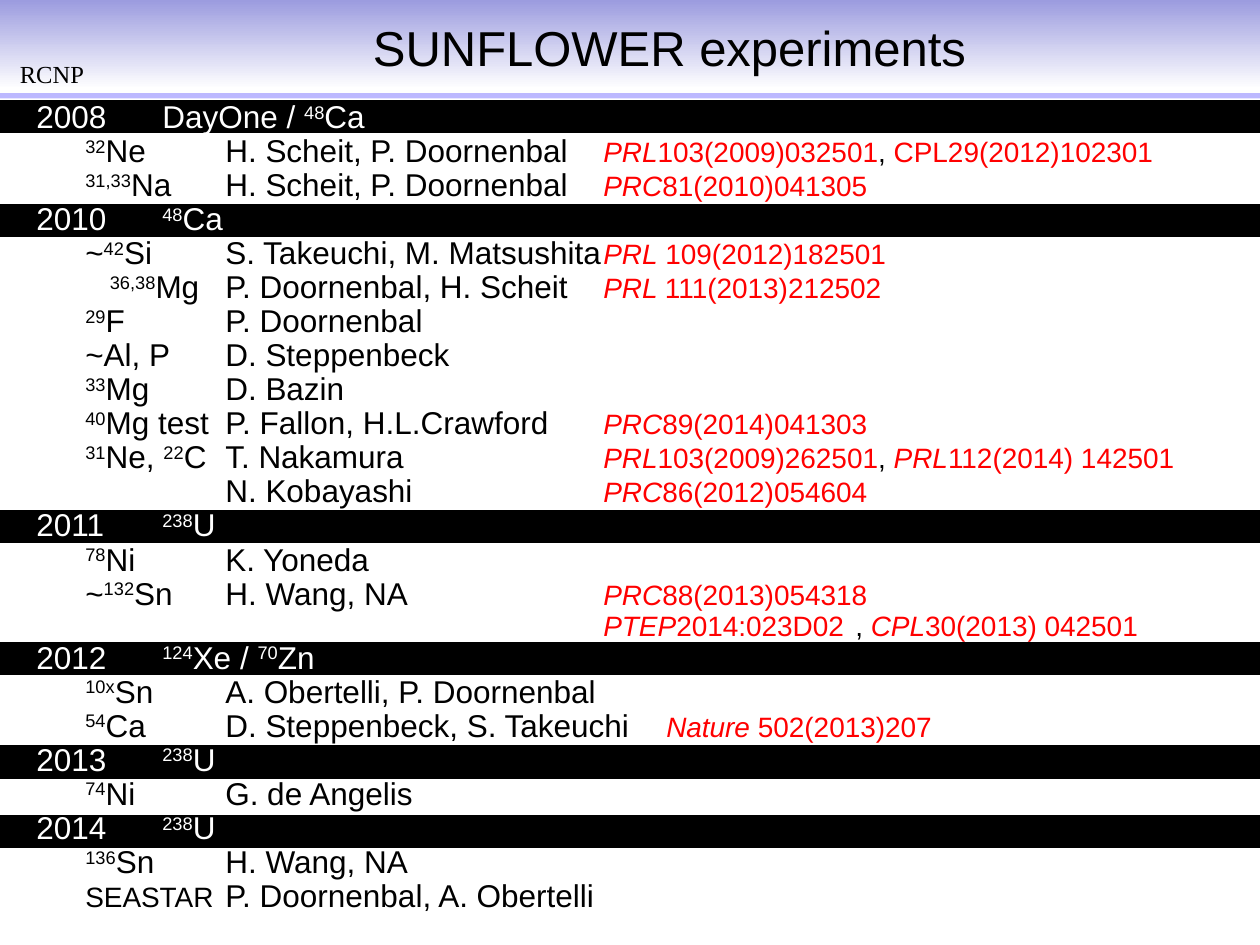
"""Build the SUNFLOWER experiments slide: beam times, spokespersons and papers by year."""
from pptx import Presentation
from pptx.dml.color import RGBColor
from pptx.enum import shapes, text
from pptx.oxml.ns import qn
from pptx.util import Pt
from lxml import etree

HUES = {"black": "000000", "white": "FFFFFF", "red": "FF0000",
        "line": "BCB8FF", "top": "9C9CDF"}
TABS = [28, 108, 324, 360, 468]

YEARS = [
    ("2008", "DayOne / ^48^Ca", 58.3, [
        ("^32^Ne", "H. Scheit, P. Doornenbal",
         [("PRL", "103(2009)032501"), ("", "CPL29(2012)102301")]),
        ("^31,33^Na", "H. Scheit, P. Doornenbal", [("PRC", "81(2010)041305")]),
    ]),
    ("2010", "^48^Ca", 117.5, [
        ("~^42^Si", "S. Takeuchi, M. Matsushita", [("PRL", " 109(2012)182501")]),
        ("^36,38^Mg", "P. Doornenbal, H. Scheit", [("PRL ", "111(2013)212502")]),
        ("^29^F", "P. Doornenbal", []),
        ("~Al, P", "D. Steppenbeck", []),
        ("^33^Mg", "D. Bazin", []),
        ("^40^Mg test", "P. Fallon, H.L.Crawford", [("PRC", "89(2014)041303")]),
        ("^31^Ne, ^22^C", "T. Nakamura",
         [("PRL", "103(2009)262501"), ("PRL", "112(2014) 142501")]),
        ("", "N. Kobayashi", [("PRC", "86(2012)054604")]),
    ]),
    ("2011", "^238^U", 292.4, [
        ("^78^Ni", "K. Yoneda", []),
        ("~^132^Sn", "H. Wang, NA", [("PRC", "88(2013)054318")]),
        ("", "", [("PTEP", "2014:023D02\t"), ("CPL", "30(2013) 042501")]),
    ]),
    ("2012", "^124^Xe / ^70^Zn", 368, [
        ("^10x^Sn", "A. Obertelli, P. Doornenbal", []),
        ("^54^Ca", "D. Steppenbeck, S. Takeuchi", [("Nature ", "502(2013)207")]),
    ]),
    ("2013", "^238^U", 427, [("^74^Ni", "G. de Angelis", [])]),
    ("2014", "^238^U", 466.5, [
        ("^136^Sn", "H. Wang, NA", []),
        ("SEASTAR", "P. Doornenbal, A. Obertelli", []),
    ]),
]


def add_run(para, words, size, hue="black", italic=None, raised=False, face="Arial"):
    """Append one formatted run."""
    run = para.add_run()
    run.text = words
    run.font.name, run.font.size, run.font.italic = face, Pt(size), italic
    run.font.color.rgb = RGBColor.from_string(HUES[hue])
    if raised:
        run.font._element.set("baseline", "30000")


def add_line(frame, words, stops, size=18, hue="black"):
    """Add a tabbed line, raising the parts between carets."""
    first = frame.paragraphs[0]
    para = frame.add_paragraph() if first.runs else first
    para.line_spacing = 0.9
    tabs = etree.SubElement(para._p.get_or_add_pPr(), qn("a:tabLst"))
    for stop in stops:
        etree.SubElement(tabs, qn("a:tab"), pos=str(Pt(stop)), algn="l")
    for i, part in enumerate(words.split("^")):
        if part:
            add_run(para, part, size, hue, raised=i % 2 == 1)
    return para


deck = Presentation()
deck.slide_width, deck.slide_height = Pt(720), Pt(540)
slide = deck.slides.add_slide(deck.slide_layouts[5])

bars = [(53.25, 720, 3, "line"), (0, 720, 51, "top")]
bars += [(top, 726, 17, "black") for _, _, top, _ in YEARS]
for top, width, height, hue in bars:
    bar = slide.shapes.add_shape(shapes.MSO_SHAPE.RECTANGLE, 0, Pt(top), Pt(width), Pt(height))
    bar.shadow.inherit = False
    if hue == "top":
        bar.fill.gradient()
        bar.fill.gradient_angle = 270
        for stop, tint in zip(bar.fill.gradient_stops, ("top", "white")):
            stop.color.rgb = RGBColor.from_string(HUES[tint])
    else:
        bar.fill.solid()
        bar.fill.fore_color.rgb = RGBColor.from_string(HUES[hue])
    if hue == "black":
        bar.line.color.rgb = RGBColor.from_string(HUES[hue])
        bar.line.width = Pt(2)
    else:
        bar.line.fill.background()

lab = slide.shapes.add_textbox(Pt(4.3), Pt(30.2), Pt(52), Pt(24.5)).text_frame
lab.word_wrap = False
add_run(lab.paragraphs[0], "RCNP", 14, face="Times New Roman")

title = slide.shapes.title
slide.shapes._spTree.append(title._element)
title.left, title.top, title.width, title.height = Pt(55), Pt(5), Pt(655), Pt(44)
frame = title.text_frame
frame.margin_left = frame.margin_right = frame.margin_top = frame.margin_bottom = Pt(3)
frame.vertical_anchor = text.MSO_ANCHOR.MIDDLE
head = frame.paragraphs[0]
head.alignment = text.PP_ALIGN.CENTER
add_run(head, "SUNFLOWER experiments", 28)

body = slide.shapes.add_textbox(Pt(13.7), Pt(54.4), Pt(712), Pt(476.6)).text_frame
body.word_wrap = True
for year, beam, _, rows in YEARS:
    add_line(body, f"{year}\t{beam}", [72], hue="white")
    for ion, names, papers in rows:
        stops = [42] + TABS[1:] if ion == "^36,38^Mg" else TABS
        size = 16 if ion == "SEASTAR" or not names else 18
        para = add_line(body, f"\t{ion}", stops, size)
        add_run(para, f"\t{names}" + ("\t" if papers else ""), 18 if names else 16)
        for i, (name, rest) in enumerate(papers):
            if i:
                add_run(para, ", ", 16)
            if name:
                add_run(para, name, 16, "red", True)
            add_run(para, rest, 16, "red")

deck.save("out.pptx")
